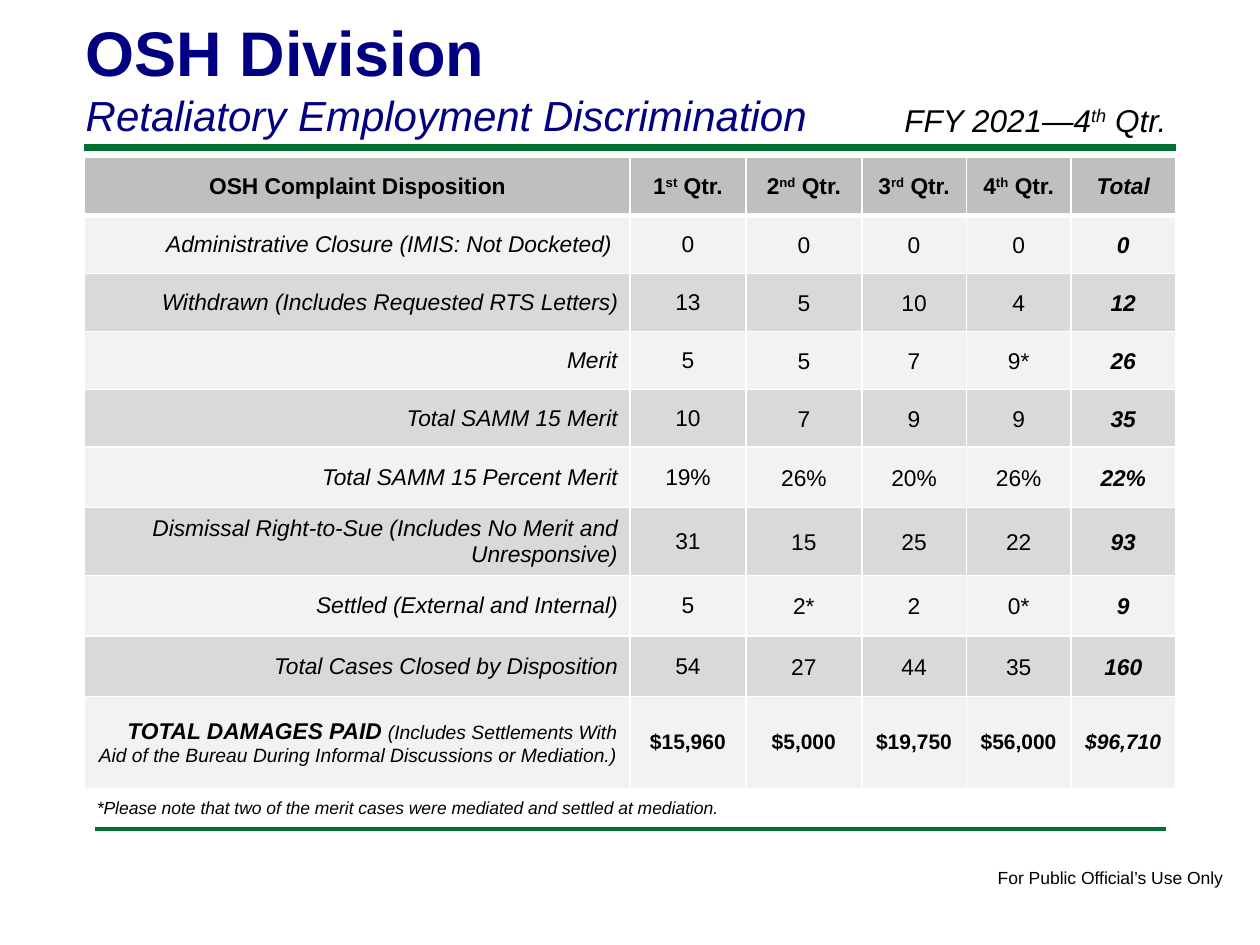
import pptx
import pptx.util
import pptx.dml.color
import pptx.enum.text
import pptx.enum.shapes
import pptx.oxml
import pptx.oxml.ns
from lxml import etree

Inches, Pt = pptx.util.Inches, pptx.util.Pt
ALIGN = pptx.enum.text.PP_ALIGN
ANCHOR = pptx.enum.text.MSO_ANCHOR
AUTO = pptx.enum.text.MSO_AUTO_SIZE

COLORS = {"green": "007030", "navy": "000080", "black": "000000", "white": "FFFFFF",
          "header": "BFBFBF", "light": "F2F2F2", "dark": "D9D9D9"}

# Content: text between ^ marks is superscript
TITLE = "OSH Division"
SUBTITLE = "Retaliatory Employment Discrimination"
PERIOD = "FFY 2021—4^th^ Qtr."
NOTE = "*Please note that two of the merit cases were mediated and settled at mediation."
FOOTER = "For Public Official’s Use Only"
HEADER = ["OSH Complaint Disposition", "1^st^ Qtr.", "2^nd^ Qtr.", "3^rd^ Qtr.",
          "4^th^ Qtr.", "Total"]
ROWS = [
    ["Administrative Closure (IMIS: Not Docketed) ", "0", "0", "0", "0", "0"],
    ["Withdrawn (Includes Requested RTS Letters)", "13", "5", "10", "4", "12"],
    ["Merit", "5", "5", "7", "9*", "26"],
    ["Total SAMM 15 Merit", "10", "7", "9", "9", "35"],
    ["Total SAMM 15 Percent Merit", "19%", "26%", "20%", "26%", "22%"],
    ["Dismissal Right-to-Sue (Includes No Merit and Unresponsive)",
     "31", "15", "25", "22", "93"],
    ["Settled (External and Internal)", "5", "2*", "2", "0*", "9"],
    ["Total Cases Closed by Disposition", "54", "27", "44", "35", "160"],
    ["TOTAL DAMAGES PAID ", "$15,960", "$5,000", "$19,750", "$56,000", "$96,710"],
]
DAMAGES_DETAIL = ("(Includes Settlements With Aid of the Bureau "
                  "During Informal Discussions or Mediation.)")
COL_WIDTHS = [4.33, 0.92, 0.92, 0.83, 0.83, 0.83]
ROW_HEIGHTS = [0.46] * 5 + [0.48, 0.54, 0.48, 0.48, 0.73]


def rgb(name):
    return pptx.dml.color.RGBColor.from_string(COLORS[name])


def add_runs(p, text, size, bold=False, italic=False, color="black"):
    for i, part in enumerate(text.split("^")):
        r = p.add_run()
        r.text = part
        r.font.name = "Arial"
        r.font.size = Pt(size)
        r.font.bold = bold
        r.font.italic = italic
        r.font.color.rgb = rgb(color)
        if i % 2:
            r._r.get_or_add_rPr().set("baseline", "30000")


def add_text(s, box, text, size, italic=False, wrap=False):
    tf = s.shapes.add_textbox(*map(Inches, box)).text_frame
    tf.word_wrap = wrap
    tf.auto_size = AUTO.SHAPE_TO_FIT_TEXT
    add_runs(tf.paragraphs[0], text, size, italic=italic)


def add_rule(s, x1, x2, y, width):
    line = s.shapes.add_connector(pptx.enum.shapes.MSO_CONNECTOR.STRAIGHT,
                                  *map(Inches, (x1, y, x2, y)))
    line.line.color.rgb = rgb("green")
    line.line.width = Pt(width)
    etree.SubElement(line._element.spPr, pptx.oxml.ns.qn("a:effectLst"))


def style_cell(cell, fill, top, bottom):
    tc_pr = cell._tc.get_or_add_tcPr()
    for side, width in zip("LRTB", (1, 1, top, bottom)):
        tc_pr.append(pptx.oxml.parse_xml(
            f'<a:ln{side} {pptx.oxml.ns.nsdecls("a")} w="{Pt(width)}"><a:solidFill>'
            f'<a:srgbClr val="{COLORS["white"]}"/></a:solidFill></a:ln{side}>'))
    cell.fill.solid()
    cell.fill.fore_color.rgb = rgb(fill)
    cell.vertical_anchor = ANCHOR.MIDDLE


def add_disposition_table(s):
    table = s.shapes.add_table(len(ROWS) + 1, len(HEADER), Inches(0.67), Inches(1.25),
                               Inches(sum(COL_WIDTHS)), Inches(sum(ROW_HEIGHTS))).table
    for col, width in zip(table.columns, COL_WIDTHS):
        col.width = Inches(width)
    for row, height in zip(table.rows, ROW_HEIGHTS):
        row.height = Inches(height)
    last_row, last_col = len(ROWS), len(HEADER) - 1
    for i, texts in enumerate([HEADER] + ROWS):
        fill = "header" if i == 0 else "light" if i % 2 else "dark"
        for j, text in enumerate(texts):
            cell = table.cell(i, j)
            style_cell(cell, fill, 3 if i == 1 else 1, 3 if i == 0 else 1)
            p = cell.text_frame.paragraphs[0]
            label = j == 0 and i > 0
            p.alignment = ALIGN.RIGHT if label else ALIGN.CENTER
            if 0 < i < last_row and j > 1:
                p.line_spacing = 1.07
                p.space_after = Pt(8)
            add_runs(p, text, 12 if i == last_row and j else 13,
                     bold=i in (0, last_row) or j == last_col,
                     italic=label or j == last_col)
    add_runs(table.cell(last_row, 0).text_frame.paragraphs[0], DAMAGES_DETAIL, 11,
             italic=True)


def main():
    prs = pptx.Presentation()
    prs.slide_width, prs.slide_height = Inches(10), Inches(7.5)
    s = prs.slides.add_slide(prs.slide_layouts[5])

    # Rules and footer
    add_rule(s, 0.67, 9.33, 1.17, 4)
    add_rule(s, 0.75, 9.25, 6.58, 2)
    add_text(s, (7.82, 6.83, 2.01, 0.27), FOOTER, 10)

    add_disposition_table(s)

    # Title and subtitle
    title = s.shapes.title
    title.left, title.top, title.width, title.height = map(Inches, (0.58, 0.06, 8.25, 1.11))
    tf = title.text_frame
    tf.auto_size = AUTO.NONE
    tf.vertical_anchor = ANCHOR.TOP
    add_runs(tf.paragraphs[0], TITLE, 36, bold=True, color="navy")
    add_runs(tf.add_paragraph(), SUBTITLE, 24, italic=True, color="navy")
    for p in tf.paragraphs:
        p.alignment = ALIGN.LEFT

    # Note and reporting period
    add_text(s, (0.67, 6.28, 5.16, 0.27), NOTE, 10, italic=True)
    add_text(s, (7.08, 0.75, 2.5, 0.4), PERIOD, 18, italic=True, wrap=True)

    prs.save("out.pptx")


if __name__ == "__main__":
    main()
